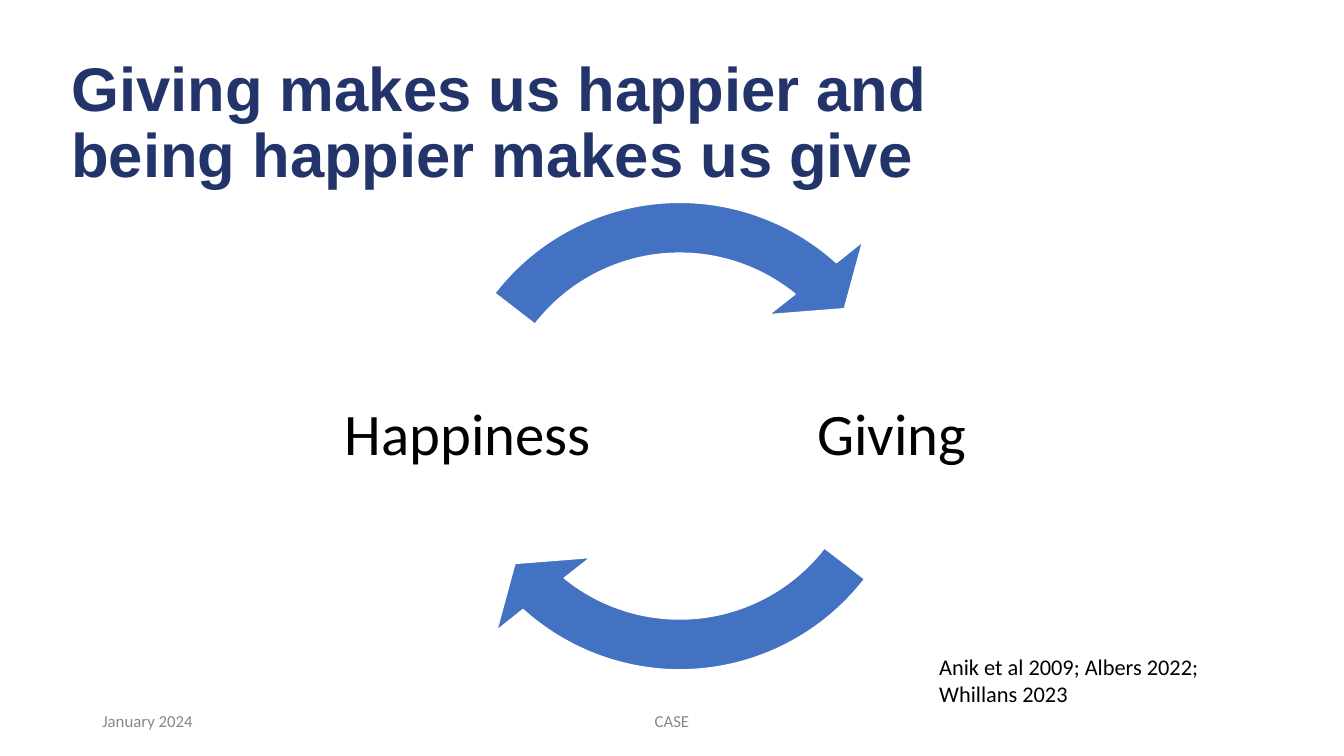
from dataclasses import dataclass
from math import cos, radians, sin, tan

from lxml import etree
from pptx import Presentation
from pptx.dml.color import RGBColor
from pptx.enum.text import MSO_ANCHOR, MSO_AUTO_SIZE, PP_ALIGN
from pptx.oxml.ns import qn
from pptx.slide import Slide
from pptx.util import Cm, Pt

LEFT, CENTER = PP_ALIGN.LEFT, PP_ALIGN.CENTER
TOP, MIDDLE = MSO_ANCHOR.TOP, MSO_ANCHOR.MIDDLE
FIT_TEXT, FIXED = MSO_AUTO_SIZE.SHAPE_TO_FIT_TEXT, MSO_AUTO_SIZE.NONE

Point = tuple[float, float]


@dataclass(frozen=True)
class Theme:
    navy: str = "223469"
    blue: str = "4372C3"
    black: str = "000000"
    gray: str = "888888"
    white: str = "FFFFFF"
    heading_font: str = "Arial"
    body_font: str = "Calibri"
    title_size: int = 44
    stage_size: int = 42
    citation_size: int = 16
    footer_size: int = 12


THEME = Theme()


@dataclass(frozen=True)
class Label:
    text: str
    left: float
    top: float
    width: float
    height: float
    size: int
    color: str
    font: str = THEME.body_font
    bold: bool = False
    align: PP_ALIGN = LEFT
    anchor: MSO_ANCHOR = MIDDLE
    inset_x: float = 0.25
    inset_y: float = 0.13
    line_spacing: float = 1.0
    autosize: MSO_AUTO_SIZE = FIXED


@dataclass(frozen=True)
class Cycle:
    center_x: float = 17.13
    center_y: float = 10.99
    half_side: float = 6.74
    outer_radius: float = 5.89
    inner_radius: float = 4.61
    tail_angle: float = 217.7
    outer_head_angle: float = 312.1
    inner_head_angle: float = 309.1
    head: tuple[Point, ...] = ((4.61, -4.9), (4.15, -3.21), (2.25, -3.06))


CYCLE = Cycle()


def stage(text: str, left: float) -> Label:
    """Describe one stage of the cycle."""
    return Label(text, left, 7.72, 6.55, 6.55, THEME.stage_size, THEME.black,
                 align=CENTER, inset_x=0.15, inset_y=0.15, line_spacing=0.9)


def footer(text: str, left: float, width: float, align: PP_ALIGN) -> Label:
    """Describe one footer entry."""
    return Label(text, left, 17.65, width, 1.02, THEME.footer_size, THEME.gray, align=align)


DATE = footer("January 2024", 2.33, 7.62, LEFT)
EVENT = footer("CASE", 11.22, 11.43, CENTER)
TITLE = Label("Giving makes us happier and being happier makes us give",
              1.55, 0.81, 25.07, 4.67, THEME.title_size, THEME.navy,
              font=THEME.heading_font, bold=True, line_spacing=0.9)
CITATION = Label("Anik et al 2009; Albers 2022; Whillans 2023",
                 23.67, 16.46, 7.75, 1.37, THEME.citation_size, THEME.black,
                 anchor=TOP, inset_x=0, inset_y=0, autosize=FIT_TEXT)
STAGES = ((stage("Giving", 19.2), -1), (stage("Happiness", 8.51), 1))


def draw_label(slide: Slide, label: Label) -> None:
    """Add a text box for the label."""
    box = slide.shapes.add_textbox(
        Cm(label.left), Cm(label.top), Cm(label.width), Cm(label.height))
    frame = box.text_frame
    frame.text = label.text
    frame.word_wrap = True
    frame.auto_size = label.autosize
    frame.vertical_anchor = label.anchor
    frame.margin_left = frame.margin_right = Cm(label.inset_x)
    frame.margin_top = frame.margin_bottom = Cm(label.inset_y)
    paragraph = frame.paragraphs[0]
    paragraph.alignment = label.align
    paragraph.line_spacing = label.line_spacing
    font = paragraph.runs[0].font
    font.name = label.font
    font.size = Pt(label.size)
    font.bold = label.bold
    font.color.rgb = RGBColor.from_string(label.color)


def on_circle(radius: float, angle: float) -> Point:
    """Return the point at an angle in degrees around the cycle's center."""
    return radius * cos(radians(angle)), radius * sin(radians(angle))


def arc_curves(radius: float, start: float, end: float, count: int = 2) -> list[list[Point]]:
    """Return the control and end points of the curves that follow an arc."""
    sweep = (end - start) / count
    reach = 4 / 3 * tan(radians(sweep / 4))
    curves = []
    for index in range(count):
        begin = start + index * sweep
        (x1, y1), (x2, y2) = on_circle(radius, begin), on_circle(radius, begin + sweep)
        curves.append([(x1 - reach * y1, y1 + reach * x1),
                       (x2 + reach * y2, y2 - reach * x2), (x2, y2)])
    return curves


def draw_cycle_arrow(slide: Slide, cycle: Cycle, direction: int) -> None:
    """Add one curved arrow, turned half a circle when direction is -1."""
    half = cycle.half_side
    left, right = Cm(cycle.center_x - half), Cm(cycle.center_x + half)
    top, bottom = Cm(cycle.center_y - half), Cm(cycle.center_y + half)
    builder = slide.shapes.build_freeform(left, top)
    builder.add_line_segments([(right, top), (right, bottom), (left, bottom)], close=True)
    arrow = builder.convert_to_shape()

    outer = arc_curves(cycle.outer_radius, cycle.tail_angle, cycle.outer_head_angle)
    inner = arc_curves(cycle.inner_radius, cycle.inner_head_angle, cycle.tail_angle)
    inner_start = on_circle(cycle.inner_radius, cycle.inner_head_angle)
    steps = [
        ("a:moveTo", [on_circle(cycle.outer_radius, cycle.tail_angle)]),
        *(("a:cubicBezTo", curve) for curve in outer),
        *(("a:lnTo", [corner]) for corner in (*cycle.head, inner_start)),
        *(("a:cubicBezTo", curve) for curve in inner),
        ("a:close", []),
    ]
    outline = next(arrow._element.iter(qn("a:path")))
    for segment in list(outline):
        outline.remove(segment)
    for tag, points in steps:
        segment = etree.SubElement(outline, qn(tag))
        for x, y in points:
            etree.SubElement(segment, qn("a:pt"), x=str(int(Cm(half + direction * x))),
                             y=str(int(Cm(half + direction * y))))

    arrow.shadow.inherit = False
    arrow.fill.solid()
    arrow.fill.fore_color.rgb = RGBColor.from_string(THEME.blue)
    arrow.line.color.rgb = RGBColor.from_string(THEME.white)
    arrow.line.width = Pt(1)


def main() -> None:
    """Build and save the slide."""
    presentation = Presentation()
    presentation.slide_width, presentation.slide_height = Cm(33.87), Cm(19.05)
    slide = presentation.slides.add_slide(presentation.slide_layouts[6])
    for label in (DATE, EVENT, TITLE):
        draw_label(slide, label)
    for label, direction in STAGES:
        draw_label(slide, label)
        draw_cycle_arrow(slide, CYCLE, direction)
    draw_label(slide, CITATION)
    presentation.save("out.pptx")


if __name__ == "__main__":
    main()
